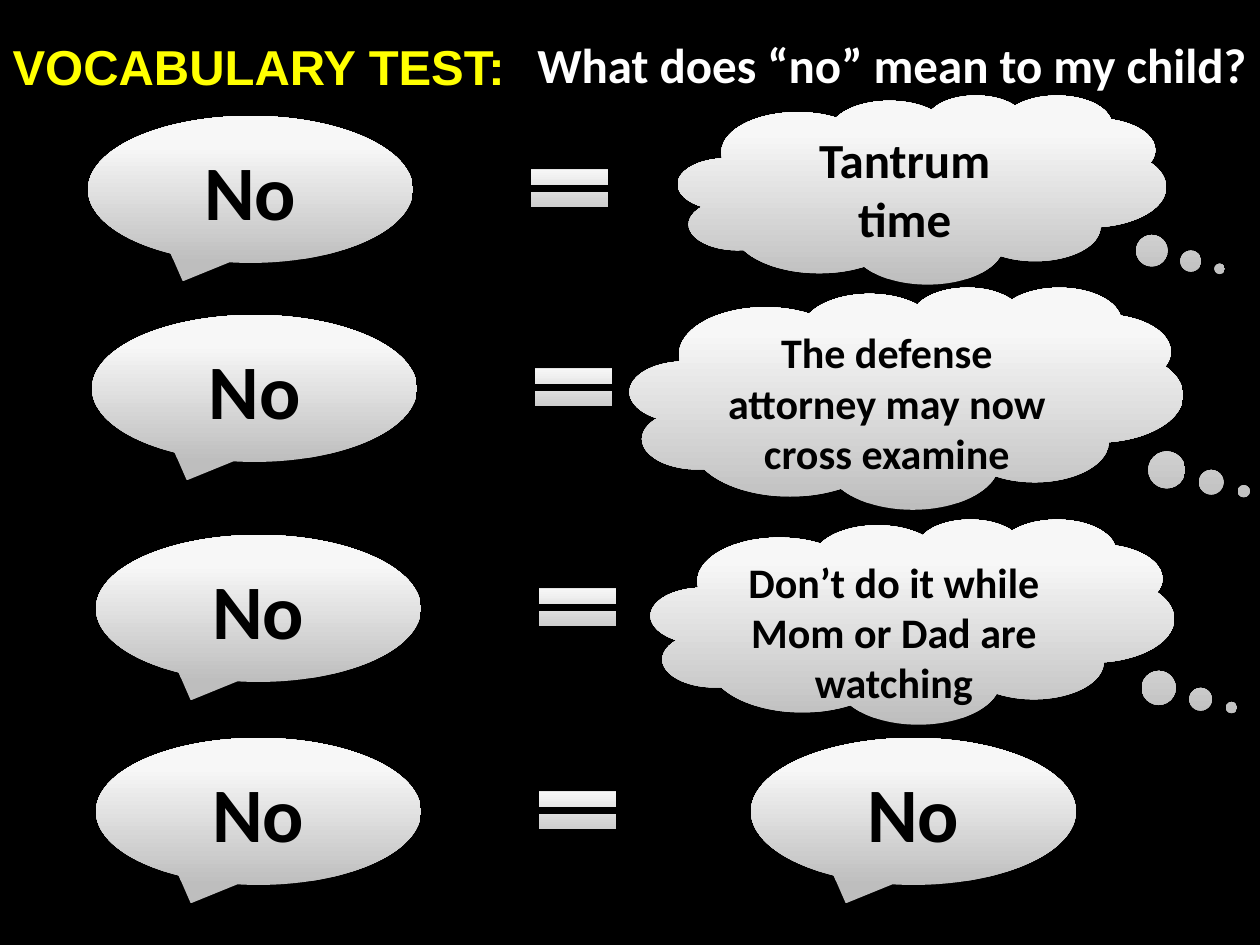
import copy
import pptx
import pptx.util
import pptx.dml.color
import pptx.enum.shapes
import pptx.enum.text

SCALE = 914400 / 126  # EMU per px
SHAPES = pptx.enum.shapes.MSO_SHAPE
ALIGN = pptx.enum.text.PP_ALIGN
TOP = pptx.enum.text.MSO_ANCHOR.TOP

THEME = {
    "black": "000000", "white": "FFFFFF", "yellow": "FFFF00",
    "gradient": [(0, "BEBEBE"), (0.8, "F7F7F7"), (1, "F8F8F8")],
    "heading": 28, "no": 44, "tantrum": 28, "thought": 24,
    "title_font": "Arial", "body_font": "Calibri",
}


def write(frame, lines, size, color, font, align):
    frame.word_wrap = True
    frame.vertical_anchor = TOP
    for index, line in enumerate(lines):
        para = frame.paragraphs[0] if index == 0 else frame.add_paragraph()
        para.alignment = align
        span = para.add_run()
        span.text = line
        span.font.size = pptx.util.Pt(size)
        span.font.name = font
        span.font.bold = True
        span.font.color.rgb = pptx.dml.color.RGBColor.from_string(color)


def add_gray_shape(kind, *bounds):
    shape = page.shapes.add_shape(kind, *[round(n * SCALE) for n in bounds])
    shape.shadow.inherit = False
    shape.line.fill.background()
    shape.fill.gradient()
    shape.fill.gradient_angle = 90
    stop_list = shape._element.spPr.find(".//" + pptx.oxml.ns.qn("a:gsLst"))
    stop_list.append(copy.deepcopy(stop_list[-1]))
    for stop, (position, color) in zip(shape.fill.gradient_stops, THEME["gradient"]):
        stop.position = position
        stop.color.rgb = pptx.dml.color.RGBColor.from_string(color)
    return shape


deck = pptx.Presentation()
deck.slide_width = round(1260 * SCALE)
deck.slide_height = round(945 * SCALE)
page = deck.slides.add_slide(deck.slide_layouts[5])

# Title fills the page as the black backdrop
title = page.shapes.title
title.left, title.top = 0, 0
title.width, title.height = deck.slide_width, deck.slide_height
title.fill.solid()
title.fill.fore_color.rgb = pptx.dml.color.RGBColor.from_string(THEME["black"])
title.text_frame.margin_top = round(36 * SCALE)
write(title.text_frame, ["VOCABULARY TEST:"], THEME["heading"], THEME["yellow"],
      THEME["title_font"], ALIGN.LEFT)

# Question beside the title
question = page.shapes.add_textbox(*[round(n * SCALE) for n in (525, 28, 758, 59)])
write(question.text_frame, ["What does “no” mean to my child?"], THEME["heading"],
      THEME["white"], THEME["body_font"], ALIGN.LEFT)

# Equals sign in each row, and the speech bubbles
rows = [(88, 116), (92, 315), (96, 535), (96, 738)]
for left, top in rows:
    add_gray_shape(SHAPES.MATH_EQUAL, left + 429, top + 41, 105, 63)
for left, top in rows + [(751, 738)]:
    bubble = add_gray_shape(SHAPES.OVAL_CALLOUT, left, top, 325, 147)
    write(bubble.text_frame, ["No"], THEME["no"], THEME["black"],
          THEME["body_font"], ALIGN.CENTER)

# Thought clouds: what the child hears
clouds = [
    ((678, 95, 488, 189), ["Tantrum", "time"], THEME["tantrum"]),
    ((630, 287, 553, 222), ["The defense attorney may now cross examine"], THEME["thought"]),
    ((651, 519, 523, 205), ["Don’t do it while Mom or Dad are watching"], THEME["thought"]),
]
for bounds, lines, size in clouds:
    cloud = add_gray_shape(SHAPES.CLOUD_CALLOUT, *bounds)
    cloud.adjustments[0] = 0.61
    cloud.adjustments[1] = 0.42
    write(cloud.text_frame, lines, size, THEME["black"], THEME["body_font"], ALIGN.CENTER)

deck.save("out.pptx")
